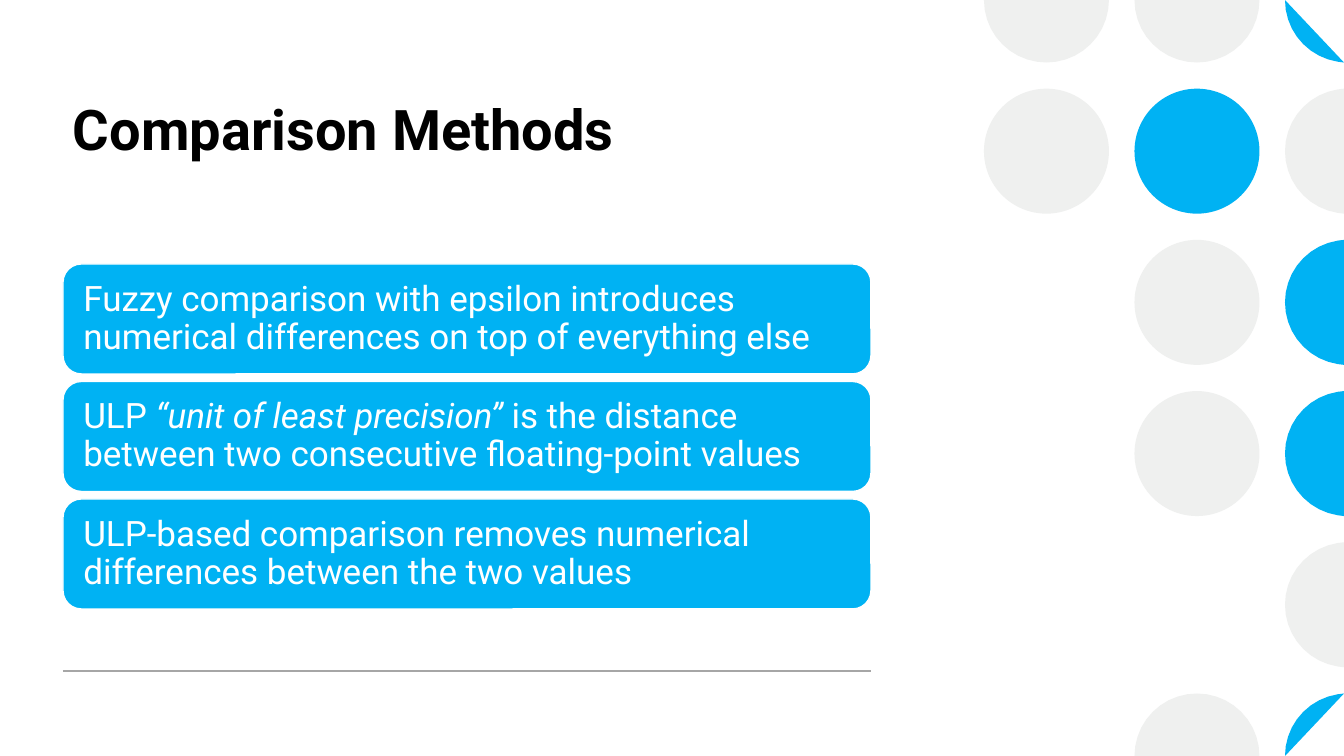
import math

from lxml import etree
from pptx import Presentation
from pptx.dml.color import RGBColor
from pptx.enum.shapes import MSO_CONNECTOR, MSO_SHAPE
from pptx.enum.text import MSO_ANCHOR, PP_ALIGN
from pptx.oxml.ns import qn
from pptx.util import Emu, Pt

ELLIPSE, ROUNDED = MSO_SHAPE.OVAL, MSO_SHAPE.ROUNDED_RECTANGLE
STRAIGHT = MSO_CONNECTOR.STRAIGHT
TOP, MIDDLE, LEFT = MSO_ANCHOR.TOP, MSO_ANCHOR.MIDDLE, PP_ALIGN.LEFT

# Content: each statement is a list of (text, italic) runs
TITLE = "Comparison Methods"
STATEMENTS = [
    [("Fuzzy comparison with epsilon introduces numerical differences "
      "on top of everything else", False)],
    [("ULP ", False), ("“unit of least precision” ", True),
     ("is the distance between two consecutive floating-point values", False)],
    [("ULP-based comparison removes numerical differences "
      "between the two values", False)],
]
# Dot pattern: one string per row, one letter per column
DOTS = ["ggb", "gbg", " gb", " gb", "  g", " gb"]

# Style
FONT = "Roboto"
COLORS = {"g": "EFF0EF", "b": "00B2F3", "rule": "A6A6A6",
          "title": "000000", "white": "FFFFFF"}

# Layout in px
WIDTH, HEIGHT = 1344, 756
EMU_PER_PX = 914400 / 100.8
MARGIN, CONTENT_W = 63, 808
TITLE_TOP, TITLE_H, TITLE_INSET = 85, 140, 10
BOX_TOP, BOX_BOTTOM, BOX_H, BOX_INSET = 264, 609, 110, 15
RULE_Y = 671
DOT_SIZE, DOT_LEFT, DOT_RIGHT = 125, 984, 1285
ARC_STEPS = 40


def px(n):
    return Emu(round(n * EMU_PER_PX))


def color(name):
    return RGBColor.from_string(COLORS[name])


def clipped_circle(left, top):
    """Outline of a circle held inside the slide, without points on a straight run."""
    radius = DOT_SIZE / 2
    points = []
    for i in range(ARC_STEPS):
        angle = 2 * math.pi * i / ARC_STEPS
        x = left + radius + radius * math.cos(angle)
        y = top + radius + radius * math.sin(angle)
        points.append((px(min(x, WIDTH)), px(min(max(y, 0), HEIGHT))))
    corners = []
    for i, point in enumerate(points):
        trio = (points[i - 1], point, points[(i + 1) % ARC_STEPS])
        if all(len({p[axis] for p in trio}) > 1 for axis in (0, 1)):
            corners.append(point)
    return list(dict.fromkeys(corners))


def add_dot(shapes, left, top, fill):
    """Draw a circle, cut off at the slide edges."""
    right, bottom = left + DOT_SIZE, top + DOT_SIZE
    if top >= 0 and right <= WIDTH and bottom <= HEIGHT:
        sp = shapes.add_shape(ELLIPSE, px(left), px(top), px(DOT_SIZE), px(DOT_SIZE))
    else:
        points = clipped_circle(left, top)
        builder = shapes.build_freeform(*points[0])
        builder.add_line_segments(points[1:], close=True)
        sp = builder.convert_to_shape()
    sp.shadow.inherit = False
    sp.fill.solid()
    sp.fill.fore_color.rgb = color(fill)
    sp.line.fill.background()


def write(sp, runs, size, ink, inset, anchor, bold=False, spacing=1.0):
    tf = sp.text_frame
    tf.word_wrap = True
    tf.vertical_anchor = anchor
    tf.margin_left = tf.margin_right = px(inset)
    tf.margin_top = tf.margin_bottom = px(10)
    p = tf.paragraphs[0]
    p.alignment = LEFT
    p.line_spacing = spacing
    p.font.name, p.font.size, p.font.bold = FONT, Pt(size), bold
    p.font.color.rgb = color(ink)
    for text, italic in runs:
        r = p.add_run()
        r.text = text
        if italic:
            r.font.italic = True


prs = Presentation()
prs.slide_width, prs.slide_height = px(WIDTH), px(HEIGHT)
shapes = prs.slides.add_slide(prs.slide_layouts[6]).shapes

# Dot pattern
col_pitch = (DOT_RIGHT - DOT_LEFT) / (len(DOTS[0]) - 1)
row_pitch = HEIGHT / (len(DOTS) - 1)
for row, letters in enumerate(DOTS):
    for col, letter in enumerate(letters):
        if letter != " ":
            add_dot(shapes, DOT_LEFT + col * col_pitch,
                    row * row_pitch - DOT_SIZE / 2, letter)

# Rule
rule = shapes.add_connector(STRAIGHT, px(MARGIN), px(RULE_Y),
                            px(MARGIN + CONTENT_W), px(RULE_Y))
rule.line.color.rgb = color("rule")
rule.line.width = Pt(1)
etree.SubElement(rule._element.spPr, qn("a:effectLst"))

# Title
title = shapes.add_textbox(px(MARGIN), px(TITLE_TOP), px(CONTENT_W), px(TITLE_H))
write(title, [(TITLE, False)], 40, "title", TITLE_INSET, TOP, bold=True)

# Statement boxes
box_pitch = (BOX_BOTTOM - BOX_H - BOX_TOP) / (len(STATEMENTS) - 1)
for i, runs in enumerate(STATEMENTS):
    box = shapes.add_shape(ROUNDED, px(MARGIN), px(BOX_TOP + i * box_pitch),
                           px(CONTENT_W), px(BOX_H))
    box.shadow.inherit = False
    box.fill.solid()
    box.fill.fore_color.rgb = color("b")
    box.line.color.rgb = color("white")
    box.line.width = Pt(1)
    write(box, runs, 25, "white", BOX_INSET, MIDDLE, spacing=0.9)

prs.save("out.pptx")
